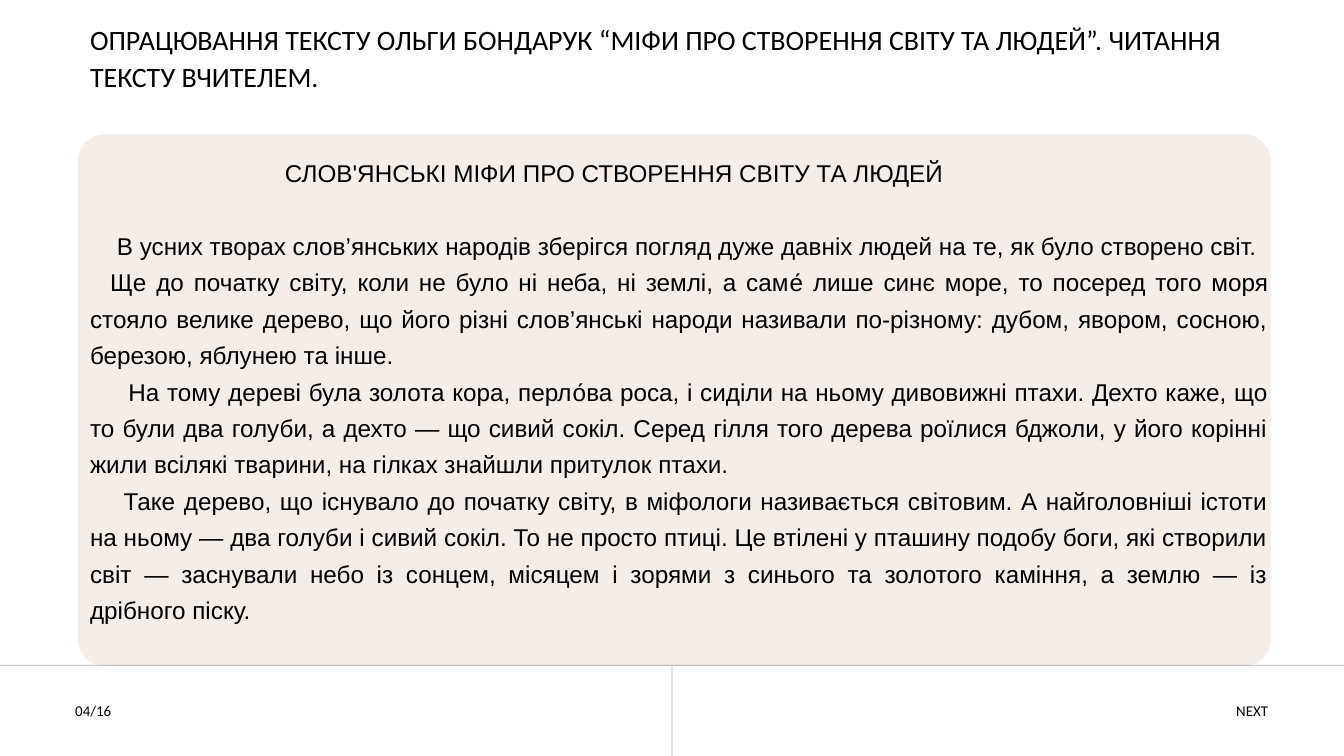
from lxml import etree
from pptx import Presentation
from pptx.dml.color import RGBColor
from pptx.enum.shapes import MSO_CONNECTOR, MSO_SHAPE
from pptx.enum.text import MSO_ANCHOR, PP_ALIGN
from pptx.oxml.ns import qn
from pptx.util import Inches, Pt

LEFT, RIGHT, JUSTIFY = PP_ALIGN.LEFT, PP_ALIGN.RIGHT, PP_ALIGN.JUSTIFY
TOP = MSO_ANCHOR.TOP
ROUNDED, STRAIGHT = MSO_SHAPE.ROUNDED_RECTANGLE, MSO_CONNECTOR.STRAIGHT

prs = Presentation()
prs.slide_width, prs.slide_height = Inches(20), Inches(11.25)
W, H = prs.slide_width, prs.slide_height
COL = ROW = W / 20
s = prs.slides.add_slide(prs.slide_layouts[5])


def rgb(value):
    return RGBColor.from_string(value)


def write(sp, box, paragraphs, font, size, leading):
    x, y, w, h = box
    sp.left, sp.top = int(x * COL), int(y * ROW)
    sp.width, sp.height = int(w * COL), int(h * ROW)
    tf = sp.text_frame
    tf.word_wrap = True
    tf.vertical_anchor = TOP
    tf.margin_left = tf.margin_right = tf.margin_top = tf.margin_bottom = 0
    tf.text = "\n".join(text for text, align, indent in paragraphs)
    for p, (text, align, indent) in zip(tf.paragraphs, paragraphs):
        p.alignment = align
        p.line_spacing = Pt(leading)
        p.space_before = p.space_after = Pt(0)
        p._p.get_or_add_pPr().set("indent", str(int(indent * COL)))
        for r in p.runs:
            r.font.name = font
            r.font.size = Pt(size)
            r.font.color.rgb = rgb("000000")
    return tf


title = "ОПРАЦЮВАННЯ ТЕКСТУ ОЛЬГИ БОНДАРУК “МІФИ ПРО СТВОРЕННЯ СВІТУ ТА ЛЮДЕЙ”. ЧИТАННЯ ТЕКСТУ ВЧИТЕЛЕМ."
write(s.shapes.title, (1.34, 0.3, 17.54, 1.05), [(title, LEFT, 0)], "Calibri", 30, 39)

card = s.shapes.add_shape(ROUNDED, int(1.16 * COL), int(2 * ROW), int(17.75 * COL), int(7.91 * ROW))
card.adjustments[0] = 0.05
card.shadow.inherit = False
card.fill.solid()
card.fill.fore_color.rgb = rgb("F4EDE8")
card.line.fill.background()

for x1, y1, x2, y2 in [(0, 0.88, 1, 0.88), (0.5, 0.88, 0.5, 1)]:
    rule = s.shapes.add_connector(STRAIGHT, int(x1 * W), int(y1 * H), int(x2 * W), int(y2 * H))
    rule.line.width = Pt(0.75)
    rule.line.color.rgb = rgb("000000")
    color = rule._element.spPr.find(".//" + qn("a:srgbClr"))
    etree.SubElement(color, qn("a:alpha")).set("val", "30000")
    etree.SubElement(rule._element.spPr, qn("a:effectLst"))

story = [
    ("СЛОВ'ЯНСЬКІ МІФИ ПРО СТВОРЕННЯ СВІТУ ТА ЛЮДЕЙ", LEFT, 2.9),
    ("В усних творах слов’янських народів зберігся погляд дуже давніх людей на те, як було створено світ.", JUSTIFY, 0.4),
    ("Ще до початку світу, коли не було ні неба, ні землі, а саме́ лише синє море, то посеред того моря "
     "стояло велике дерево, що його різні слов’янські народи називали по-різному: дубом, явором, сосною, "
     "березою, яблунею та інше.", JUSTIFY, 0.3),
    ("На тому дереві була золота кора, перло́ва роса, і сиділи на ньому дивовижні птахи. Дехто каже, що "
     "то були два голуби, а дехто — що сивий сокіл. Серед гілля того дерева роїлися бджоли, у його корінні "
     "жили всілякі тварини, на гілках знайшли притулок птахи.", JUSTIFY, 0.57),
    ("Таке дерево, що існувало до початку світу, в міфологи називається світовим. А найголовніші істоти "
     "на ньому — два голуби і сивий сокіл. То не просто птиці. Це втілені у пташину подобу боги, які створили "
     "світ — заснували небо із сонцем, місяцем і зорями з синього та золотого каміння, а землю — із "
     "дрібного піску.", JUSTIFY, 0.5),
]
body = s.shapes.add_textbox(0, 0, 0, 0)
tf = write(body, (1.34, 2.25, 17.54, 7.6), story, "Arial", 26, 39)
tf.paragraphs[0].space_after = Pt(39)

for text, x, align in [("04/16", 1.12, LEFT), ("NEXT", 16.27, RIGHT)]:
    sp = s.shapes.add_textbox(0, 0, 0, 0)
    write(sp, (x, 10.39, 2.6, 0.3), [(text, align, 0)], "Calibri", 16, 22.4)

prs.save("out.pptx")
